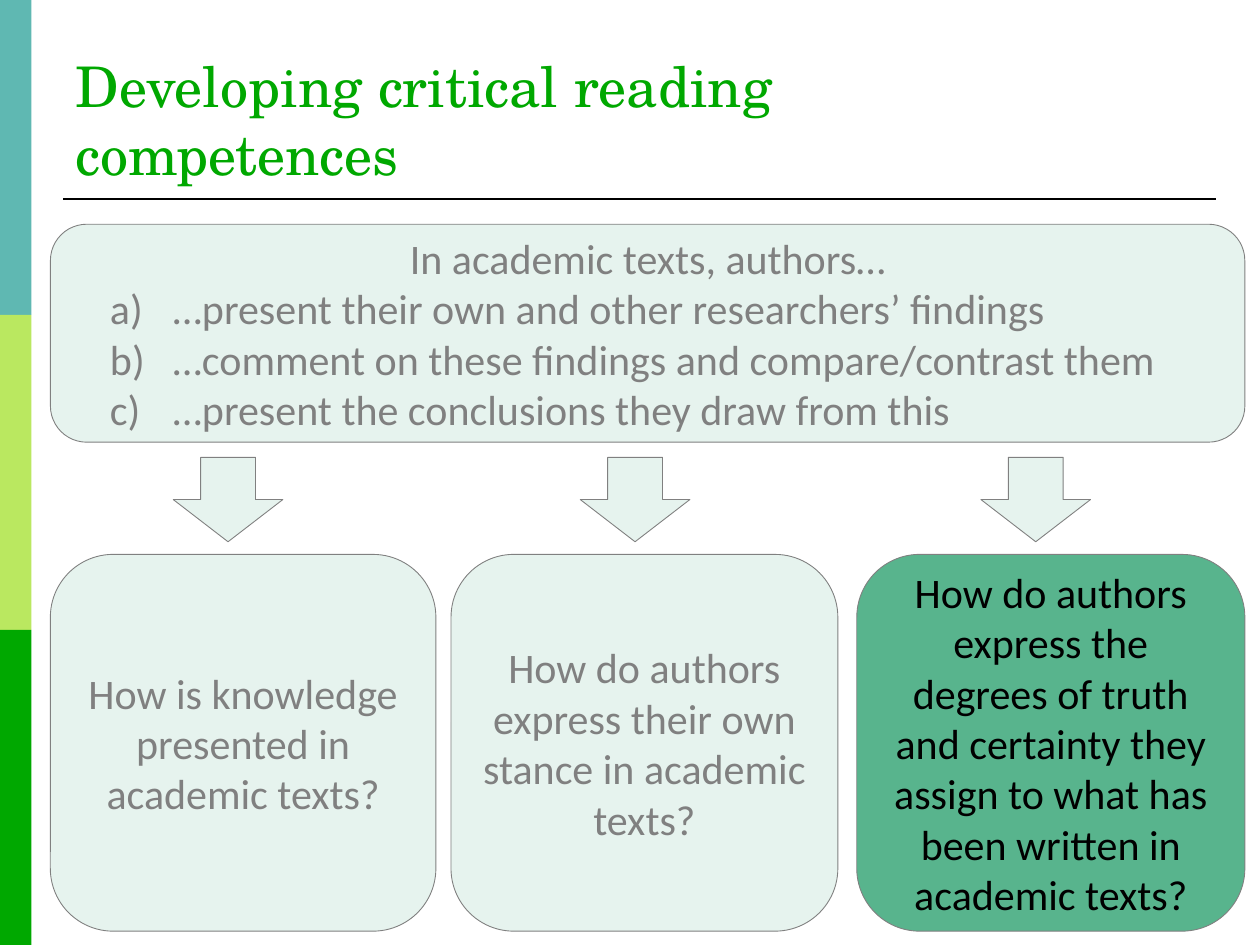
from lxml import etree
from pptx import Presentation
from pptx.dml.color import RGBColor
from pptx.enum.shapes import MSO_CONNECTOR, MSO_SHAPE
from pptx.enum.text import MSO_ANCHOR, MSO_AUTO_SIZE, PP_ALIGN
from pptx.oxml.ns import qn
from pptx.util import Inches, Pt

RECTANGLE = MSO_SHAPE.RECTANGLE
ROUNDED = MSO_SHAPE.ROUNDED_RECTANGLE
ARROW = MSO_SHAPE.RIGHT_ARROW
STRAIGHT = MSO_CONNECTOR.STRAIGHT
CENTER, LEFT = PP_ALIGN.CENTER, PP_ALIGN.LEFT
MIDDLE, BOTTOM = MSO_ANCHOR.MIDDLE, MSO_ANCHOR.BOTTOM
NO_AUTOFIT = MSO_AUTO_SIZE.NONE

TEAL = RGBColor(0x5F, 0xB8, 0xB2)
LIME = RGBColor(0xBA, 0xE8, 0x60)
GREEN = RGBColor(0x00, 0xA8, 0x00)
SEA = RGBColor(0x58, 0xB4, 0x8D)
GRAY = RGBColor(0x80, 0x80, 0x80)
BLACK = RGBColor(0x00, 0x00, 0x00)

FINDINGS = [
    "…present their own and other researchers’ findings",
    "…comment on these findings and compare/contrast them",
    "…present the conclusions they draw from this",
]
# left, width, arrow centre, question, highlighted
QUESTIONS = [
    (0.4, 3.06, 1.81, "How is knowledge presented in academic texts?", False),
    (3.58, 3.07, 5.04,
     "How do authors express their own stance in academic texts?", False),
    (6.8, 3.08, 8.22,
     "How do authors express the degrees of truth and certainty they assign "
     "to what has been written in academic texts?", True),
]


class SlideBuilder:
    title_font, title_size = "TeX Gyre Schola", Pt(32)
    body_font, body_size = "Calibri", Pt(24)
    faded_alpha = 15

    def __init__(self, slide):
        self.slide = slide

    def span(self, para, text, font, size, color):
        span = para.add_run()
        span.text = text
        span.font.name = font
        span.font.size = size
        span.font.color.rgb = color

    def title(self, text, left, top, width, height):
        box = self.slide.shapes.title
        box.left, box.top = Inches(left), Inches(top)
        box.width, box.height = Inches(width), Inches(height)
        frame = box.text_frame
        frame.word_wrap = True
        frame.auto_size = NO_AUTOFIT
        frame.vertical_anchor = BOTTOM
        para = frame.paragraphs[0]
        para.alignment = LEFT
        self.span(para, text, self.title_font, self.title_size, GREEN)

    def shape(self, kind, left, top, width, height, color):
        shape = self.slide.shapes.add_shape(
            kind, Inches(left), Inches(top), Inches(width), Inches(height))
        shape.shadow.inherit = False
        shape.fill.solid()
        shape.fill.fore_color.rgb = color
        shape.line.fill.background()
        return shape

    def panel(self, kind, left, top, width, height, faded=True):
        """Add an outlined shape, nearly transparent when faded."""
        shape = self.shape(kind, left, top, width, height, SEA)
        shape.line.color.rgb = GRAY
        shape.line.width = Pt(0.5)
        if faded:
            color = shape.fill._xPr.find(qn("a:solidFill"))[0]
            alpha = etree.SubElement(color, qn("a:alpha"))
            alpha.set("val", str(self.faded_alpha * 1000))
        return shape

    def text_panel(self, text, left, top, width, height, faded=True, items=()):
        """Add a rounded panel with centred text and an optional lettered list."""
        frame = self.panel(ROUNDED, left, top, width, height, faded).text_frame
        frame.word_wrap = True
        frame.vertical_anchor = MIDDLE
        color = GRAY if faded else BLACK
        para = frame.paragraphs[0]
        para.alignment = CENTER
        self.span(para, text, self.body_font, self.body_size, color)
        for item in items:
            para = frame.add_paragraph()
            para.alignment = LEFT
            para.level = 1
            self.letter(para)
            self.span(para, item, self.body_font, self.body_size, color)

    def letter(self, para):
        """Number the paragraph a), b), c) with a hanging indent."""
        properties = para._p.get_or_add_pPr()
        properties.set("marL", str(Inches(0.79)))
        properties.set("indent", str(Inches(-0.5)))
        bullet = etree.SubElement(properties, qn("a:buAutoNum"))
        bullet.set("type", "alphaLcParenR")

    def down_arrow(self, center, top, length, breadth):
        left = center - length / 2
        self.panel(ARROW, left, top, length, breadth).rotation = 90

    def rule(self, left, right, y):
        line = self.slide.shapes.add_connector(
            STRAIGHT, Inches(left), Inches(y), Inches(right), Inches(y))
        line.line.color.rgb = BLACK
        line.line.width = Pt(1.5)
        etree.SubElement(line._element.spPr, qn("a:effectLst"))


def main():
    deck = Presentation()
    deck.slide_width, deck.slide_height = Inches(10), Inches(7.5)
    page = SlideBuilder(deck.slides.add_slide(deck.slide_layouts[5]))

    for row, color in enumerate((TEAL, LIME, GREEN)):
        page.shape(RECTANGLE, 0, 2.5 * row, 0.25, 2.5, color)
    page.rule(0.5, 9.65, 1.58)
    page.title("Developing critical reading competences", 0.5, 0.28, 6.21, 1.25)

    page.text_panel("In academic texts, authors…", 0.4, 1.78, 9.48, 1.73,
                    items=FINDINGS)
    for left, width, center, question, highlighted in QUESTIONS:
        page.down_arrow(center, 3.53, 0.67, 0.87)
        page.text_panel(question, left, 4.4, width, 2.99, faded=not highlighted)

    deck.save("out.pptx")


if __name__ == "__main__":
    main()
